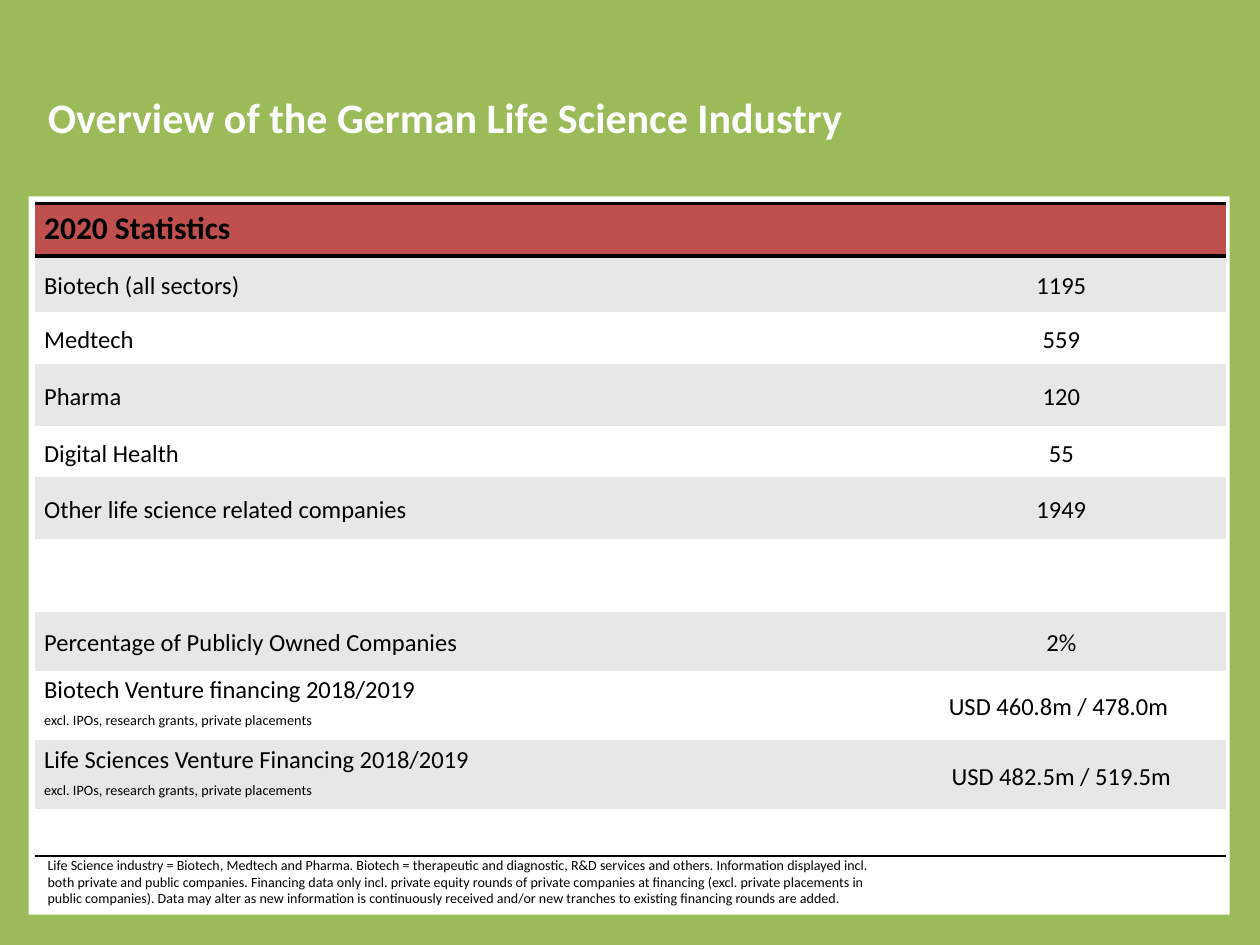
import pptx
import pptx.dml.color
import pptx.enum.shapes
import pptx.enum.text
import pptx.oxml
import pptx.oxml.ns
import pptx.util
from lxml import etree

Cm = pptx.util.Cm
Pt = pptx.util.Pt
RGBColor = pptx.dml.color.RGBColor
PP_ALIGN = pptx.enum.text.PP_ALIGN
MIDDLE = pptx.enum.text.MSO_ANCHOR.MIDDLE
qn = pptx.oxml.ns.qn

GREEN = RGBColor(0x9B, 0xBB, 0x59)
RED = RGBColor(0xC0, 0x50, 0x4D)
GREY = RGBColor(0xE7, 0xE7, 0xE7)
WHITE = RGBColor(0xFF, 0xFF, 0xFF)
BLACK = RGBColor(0, 0, 0)
FONT = "Calibri"
PLAIN_STYLE = "{2D5ABB26-0587-4C30-8999-92F81FD0307C}"

TITLE = "Overview of the German Life Science Industry"
HEADING = "2020 Statistics"
EXCLUSIONS = "excl. IPOs, research grants, private placements"
# label lines, value, row height in cm
STATISTICS = [
    (["Biotech (all sectors)"], "1195", 1.14),
    (["Medtech"], "559", 1.04),
    (["Pharma"], "120", 1.24),
    (["Digital Health"], "55", 1.04),
    (["Other life science related companies"], "1949", 1.24),
    ([], "", 1.47),
    (["Percentage of Publicly Owned Companies"], "2%", 1.19),
    (["Biotech Venture financing 2018/2019", EXCLUSIONS], "USD 460.8m / 478.0m ", 1.4),
    (["Life Sciences Venture Financing 2018/2019", EXCLUSIONS], "USD 482.5m / 519.5m", 1.4),
    ([], "", 0.94),
]
HEADING_HEIGHT = 1.05
FOOTNOTE = (
    "Life Science industry = Biotech, Medtech and Pharma. Biotech = therapeutic and "
    "diagnostic, R&D services and others. Information displayed incl. both private and "
    "public companies. Financing data only incl. private equity rounds of private "
    "companies at financing (excl. private placements in public companies). Data may "
    "alter as new information is continuously received and/or new tranches to existing "
    "financing rounds are added."
)


def write(p, text, size=14, color=BLACK, bold=False, align=PP_ALIGN.LEFT,
          spacing=None, superscript=False):
    p.alignment = align
    if spacing:
        p.line_spacing = spacing
    r = p.add_run()
    r.text = text
    r.font.name = FONT
    r.font.size = Pt(size)
    r.font.bold = bold
    r.font.color.rgb = color
    if superscript:
        r.font._element.set("baseline", "30000")


def place(shape, left, top, width, height):
    shape.left, shape.top = Cm(left), Cm(top)
    shape.width, shape.height = Cm(width), Cm(height)


def add_panel(s, *box):
    """Put the white panel behind everything else."""
    panel = s.shapes.add_shape(
        pptx.enum.shapes.MSO_SHAPE.RECTANGLE, *[Cm(v) for v in box])
    panel.shadow.inherit = False
    panel.fill.solid()
    panel.fill.fore_color.rgb = WHITE
    panel.line.fill.background()
    tree = s.shapes._spTree
    tree.remove(panel._element)
    tree.insert(2, panel._element)


def set_title(s, *box):
    title = s.shapes.title
    place(title, *box)
    tf = title.text_frame
    tf.vertical_anchor = MIDDLE
    write(tf.paragraphs[0], TITLE, size=24, color=WHITE, bold=True)


def set_border(cell, side, width):
    """Draw a black border; call it before the cell is filled."""
    ln = etree.SubElement(cell._tc.get_or_add_tcPr(), qn("a:ln" + side),
                          w=str(Pt(width)))
    fill = etree.SubElement(ln, qn("a:solidFill"))
    etree.SubElement(fill, qn("a:srgbClr"), val=str(BLACK))


def format_cell(cell, color):
    cell.fill.solid()
    cell.fill.fore_color.rgb = color
    cell.margin_left = cell.margin_right = Cm(0.18)
    cell.margin_top = cell.margin_bottom = 0


def write_cell(cell, lines, align):
    cell.vertical_anchor = MIDDLE
    tf = cell.text_frame
    for i, line in enumerate(lines):
        p = tf.add_paragraph() if i else tf.paragraphs[0]
        write(p, line, align=align, spacing=1.15, superscript=i > 0)


def add_statistics(s, left, top, width):
    heights = [HEADING_HEIGHT] + [height for _, _, height in STATISTICS]
    value_width = 6.63
    table = s.shapes.add_table(len(heights), 2, Cm(left), Cm(top), Cm(width),
                               Cm(sum(heights))).table
    table.first_row = table.horz_banding = False
    table._tbl.tblPr.find(qn("a:tableStyleId")).text = PLAIN_STYLE
    table.columns[0].width = Cm(width - value_width)
    table.columns[1].width = Cm(value_width)
    for row, height in zip(table.rows, heights):
        row.height = Cm(height)

    for cell in table.rows[0].cells:
        set_border(cell, "T", 2)
        set_border(cell, "B", 2)
        format_cell(cell, RED)
    heading = table.cell(0, 0)
    heading.merge(table.cell(0, 1))
    write(heading.text_frame.paragraphs[0], HEADING, size=18, bold=True, spacing=1.15)

    for i, (label, value, _) in enumerate(STATISTICS, 1):
        for cell in table.rows[i].cells:
            if i == len(STATISTICS):
                set_border(cell, "B", 1.5)
            format_cell(cell, GREY if i % 2 else WHITE)
        if label:
            write_cell(table.cell(i, 0), label, PP_ALIGN.LEFT)
            write_cell(table.cell(i, 1), [value], PP_ALIGN.CENTER)


def add_footnote(s, *box):
    tf = s.shapes.add_textbox(*[Cm(v) for v in box]).text_frame
    tf.word_wrap = True
    tf.vertical_anchor = MIDDLE
    write(tf.paragraphs[0], FOOTNOTE, size=8)


def main():
    prs = pptx.Presentation()
    prs.slide_width, prs.slide_height = Cm(25.4), Cm(19.05)
    s = prs.slides.add_slide(prs.slide_layouts[5])
    s.background.fill.solid()
    s.background.fill.fore_color.rgb = GREEN
    left = 0.71
    add_panel(s, 0.58, 3.96, 24.21, 14.48)
    set_title(s, left, 0.76, 22.86, 3.18)
    add_statistics(s, left, 4.11, 24)
    add_footnote(s, left, 16.92, 17.2, 1.7)
    prs.save("out.pptx")


if __name__ == "__main__":
    main()
